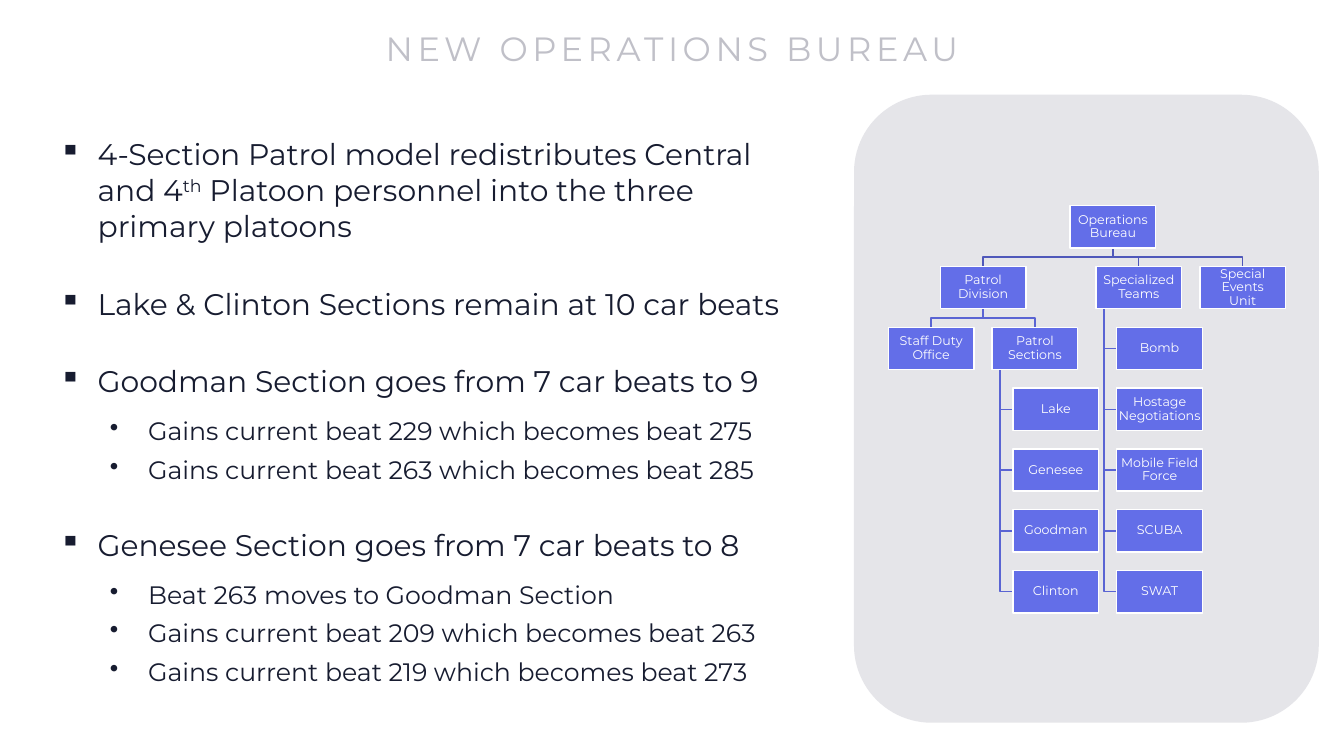
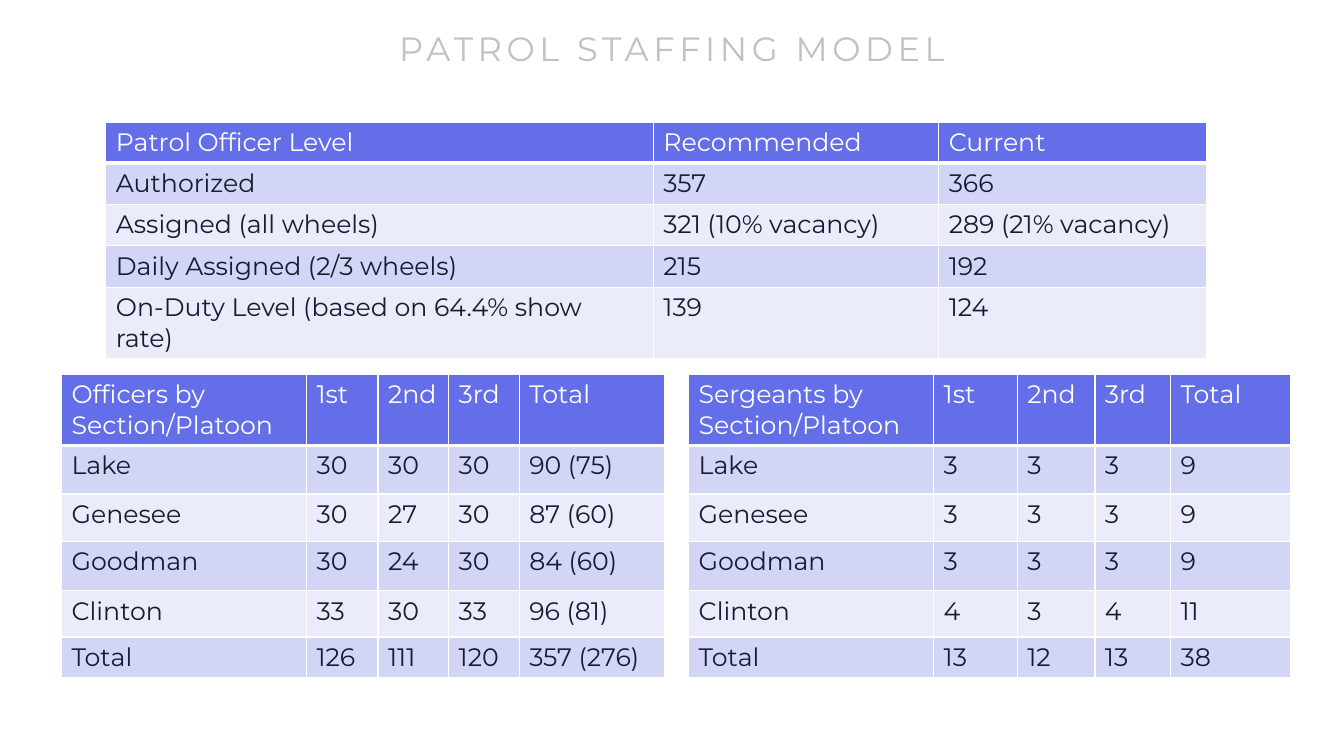
import copy

import lxml.etree
import pptx
import pptx.dml.color
import pptx.enum.shapes
import pptx.enum.text
import pptx.oxml.ns
import pptx.util

Inches = pptx.util.Inches
Pt = pptx.util.Pt
Align = pptx.enum.text.PP_ALIGN
Anchor = pptx.enum.text.MSO_ANCHOR
Preset = pptx.enum.shapes.MSO_SHAPE
qn = pptx.oxml.ns.qn


def color(value):
    return pptx.dml.color.RGBColor.from_string(value)


def write(paragraph, text, size=18, fill="171C30", font="Montserrat", align=Align.LEFT,
          line_spacing=None, space_after=0, letter_spacing=None):
    """Fill a paragraph; newlines break lines and ^marks^ raise text."""
    paragraph.alignment = align
    paragraph.space_after = Pt(space_after)
    paragraph.space_before = Pt(0)
    paragraph.line_spacing = line_spacing
    properties = None
    for line_number, line in enumerate(text.split("\n")):
        if line_number:
            paragraph.add_line_break()
            paragraph._p[-1].append(copy.deepcopy(properties))
        for part_number, part in enumerate(line.split("^")):
            run = paragraph.add_run()
            run.text = part
            run.font.size = Pt(size)
            run.font.name = font
            run.font.color.rgb = color(fill)
            properties = run._r.get_or_add_rPr()
            if letter_spacing:
                properties.set("spc", str(round(letter_spacing * 100)))
            if part_number % 2:
                properties.set("baseline", "30000")


class Deck:
    ACCENT = "636EE8"
    PANEL = "E5E5E9"
    TITLE = "C0C0C8"
    INK = "171C30"
    WHITE = "FFFFFF"
    BANDS = ("D3D5F6", "EAEBFB")

    def __init__(self):
        self.presentation = pptx.Presentation()
        self.presentation.slide_width = Inches(13.33)
        self.presentation.slide_height = Inches(7.5)
        self.slide = None

    def add_slide(self, title):
        self.slide = self.presentation.slides.add_slide(self.presentation.slide_layouts[5])
        shape = self.slide.shapes.title
        shape.left, shape.top = Inches(0.83), Inches(0.31)
        shape.width, shape.height = Inches(11.67), Inches(0.39)
        frame = shape.text_frame
        frame.auto_size = pptx.enum.text.MSO_AUTO_SIZE.NONE
        frame.vertical_anchor = Anchor.MIDDLE
        write(frame.paragraphs[0], title, size=24, fill=self.TITLE, align=Align.CENTER,
              line_spacing=0.9, letter_spacing=3.3)

    def shape(self, preset, left, top, width, height, fill, outline=None):
        shape = self.slide.shapes.add_shape(
            preset, Inches(left), Inches(top), Inches(width), Inches(height))
        shape.shadow.inherit = False
        shape.fill.solid()
        shape.fill.fore_color.rgb = color(fill)
        if outline:
            shape.line.color.rgb = color(outline)
            shape.line.width = Pt(1)
        else:
            shape.line.fill.background()
        return shape

    def box(self, text, left, top, width, height):
        shape = self.shape(Preset.RECTANGLE, left, top, width, height, self.ACCENT, self.WHITE)
        frame = shape.text_frame
        frame.word_wrap = True
        frame.vertical_anchor = Anchor.MIDDLE
        frame.margin_left = frame.margin_right = Inches(0.01)
        frame.margin_top = frame.margin_bottom = Inches(0.01)
        write(frame.paragraphs[0], text, size=9, fill=self.WHITE, align=Align.CENTER,
              line_spacing=0.9)

    def polyline(self, points, line_color):
        points = [(Inches(x), Inches(y)) for x, y in points]
        builder = self.slide.shapes.build_freeform(*points[0])
        builder.add_line_segments(points[1:], close=False)
        shape = builder.convert_to_shape()
        shape.shadow.inherit = False
        shape.fill.background()
        shape.line.color.rgb = color(line_color)
        shape.line.width = Pt(1)

    def bullets(self, items, left, top, width, height):
        shape = self.slide.shapes.add_textbox(
            Inches(left), Inches(top), Inches(width), Inches(height))
        frame = shape.text_frame
        frame.word_wrap = True
        for index, (level, text, space_after) in enumerate(items):
            paragraph = frame.add_paragraph() if index else frame.paragraphs[0]
            write(paragraph, text, size=(21.3, 18)[level], fill=self.INK,
                  space_after=space_after)
            paragraph.level = level
            properties = paragraph._p.get_or_add_pPr()
            properties.set("marL", str(Inches((0.38, 0.88)[level])))
            properties.set("indent", str(Inches(-0.38)))
            lxml.etree.SubElement(properties, qn("a:buChar")).set("char", "▪•"[level])

    def border(self, cell, side, width):
        line = lxml.etree.SubElement(cell._tc.get_or_add_tcPr(), qn("a:ln" + side))
        line.set("w", str(Pt(width)))
        fill = lxml.etree.SubElement(line, qn("a:solidFill"))
        lxml.etree.SubElement(fill, qn("a:srgbClr")).set("val", self.WHITE)

    def table(self, rows, left, top, column_widths, row_heights):
        table = self.slide.shapes.add_table(
            len(rows), len(column_widths), Inches(left), Inches(top),
            Inches(sum(column_widths)), Inches(sum(row_heights))).table
        table.first_row = table.horz_banding = False
        for column, width in zip(table.columns, column_widths):
            column.width = Inches(width)
        for row_index, values in enumerate(rows):
            table.rows[row_index].height = Inches(row_heights[row_index])
            header = row_index == 0
            for column_index, value in enumerate(values):
                cell = table.cell(row_index, column_index)
                for side in "LRTB":
                    self.border(cell, side, 3 if header and side == "B" else 1)
                cell.fill.solid()
                cell.fill.fore_color.rgb = color(
                    self.ACCENT if header else self.BANDS[(row_index - 1) % 2])
                write(cell.text_frame.paragraphs[0], value,
                      fill=self.WHITE if header else self.INK)


# Organization chart grid
BOX_WIDTH, BOX_HEIGHT = 0.85, 0.42
CHART_LEFT, CHART_TOP = 8.81, 2.04
COLUMN_STEP, ROW_STEP = 1.03, 0.6033
ROOT = "Operations\nBureau"
PATROL = "Patrol\nDivision"
SECTIONS = "Patrol\nSections"
TEAMS = "Specialized Teams"

# Each unit: column, row, parent
UNITS = {
    ROOT: (1.75, 0, None),
    PATROL: (0.5, 1, ROOT),
    TEAMS: (2, 1, ROOT),
    "Special Events\nUnit": (3, 1, ROOT),
    "Staff Duty\nOffice": (0, 2, PATROL),
    SECTIONS: (1, 2, PATROL),
}
# Stacked units hang from the left side of their parent
STACKS = {
    SECTIONS: ["Lake", "Genesee", "Goodman", "Clinton"],
    TEAMS: ["Bomb", "Hostage Negotiations", "Mobile Field Force", "SCUBA", "SWAT"],
}


def draw_organization(deck):
    units = dict(UNITS)
    for parent, names in STACKS.items():
        column, row, _ = UNITS[parent]
        for offset, name in enumerate(names, 1):
            units[name] = (column + 0.2, row + offset, parent)
    corners = {name: (CHART_LEFT + column * COLUMN_STEP, CHART_TOP + row * ROW_STEP)
               for name, (column, row, _) in units.items()}

    # Branch lines
    for name, (_, _, parent) in units.items():
        if parent is None:
            continue
        left, top = corners[name]
        parent_left, parent_top = corners[parent]
        bottom = parent_top + BOX_HEIGHT
        if parent in STACKS:
            stem, middle = parent_left + 0.08, top + BOX_HEIGHT / 2
            points = [(stem, bottom), (stem, middle), (left, middle)]
        else:
            start, end = parent_left + BOX_WIDTH / 2, left + BOX_WIDTH / 2
            bend = (bottom + top) / 2
            points = [(start, bottom), (start, bend), (end, bend), (end, top)]
        deck.polyline(points, "4F58BA" if parent == ROOT else "5A64D3")

    # Unit boxes
    for name, (left, top) in corners.items():
        deck.box(name, left, top, BOX_WIDTH, BOX_HEIGHT)


def build_operations(deck):
    deck.add_slide("NEW OPERATIONS BUREAU")
    deck.shape(Preset.ROUNDED_RECTANGLE, 8.47, 0.94, 4.61, 6.23, deck.PANEL)
    draw_organization(deck)
    # Level, text, space after
    deck.bullets([
        (0, "4-Section Patrol model redistributes Central and 4^th^ Platoon personnel "
            "into the three primary platoons", 30),
        (0, "Lake & Clinton Sections remain at 10 car beats", 30),
        (0, "Goodman Section goes from 7 car beats to 9", 12),
        (1, "Gains current beat 229 which becomes beat 275", 6),
        (1, "Gains current beat 263 which becomes beat 285", 30),
        (0, "Genesee Section goes from 7 car beats to 8", 12),
        (1, "Beat 263 moves to Goodman Section", 6),
        (1, "Gains current beat 209 which becomes beat 263", 6),
        (1, "Gains current beat 219 which becomes beat 273", 6),
    ], 0.49, 1.3, 7.65, 5.98)


def build_staffing(deck):
    deck.add_slide("PATROL STAFFING MODEL")
    deck.table([
        ("Patrol Officer Level", "Recommended", "Current"),
        ("Authorized", "357", "366"),
        ("Assigned (all wheels)", "321 (10% vacancy)", "289 (21% vacancy)"),
        ("Daily Assigned (2/3 wheels)", "215", "192"),
        ("On-Duty Level (based on 64.4% show rate)", "139", "124"),
    ], 1.05, 1.21, (5.43, 2.83, 2.66), [0.41] * 4 + [0.7])

    # Section tables side by side
    platoons = ("1st", "2nd", "3rd", "Total")
    section_heights = (0.7, 0.48, 0.47, 0.49, 0.46, 0.4)
    deck.table([
        ("Officers by Section/Platoon", *platoons),
        ("Lake", "30", "30", "30", "90 (75)"),
        ("Genesee", "30", "27", "30", "87 (60)"),
        ("Goodman", "30", "24", "30", "84 (60)"),
        ("Clinton", "33", "30", "33", "96 (81)"),
        ("Total", "126", "111", "120", "357 (276)"),
    ], 0.61, 3.71, (2.43, 0.71, 0.7, 0.7, 1.44), section_heights)
    deck.table([
        ("Sergeants by Section/Platoon", *platoons),
        ("Lake", "3", "3", "3", "9"),
        ("Genesee", "3", "3", "3", "9"),
        ("Goodman", "3", "3", "3", "9"),
        ("Clinton", "4", "3", "4", "11"),
        ("Total", "13", "12", "13", "38"),
    ], 6.83, 3.71, (2.43, 0.83, 0.77, 0.75, 1.19), section_heights)


def main():
    deck = Deck()
    build_operations(deck)
    build_staffing(deck)
    deck.presentation.save("out.pptx")


if __name__ == "__main__":
    main()
